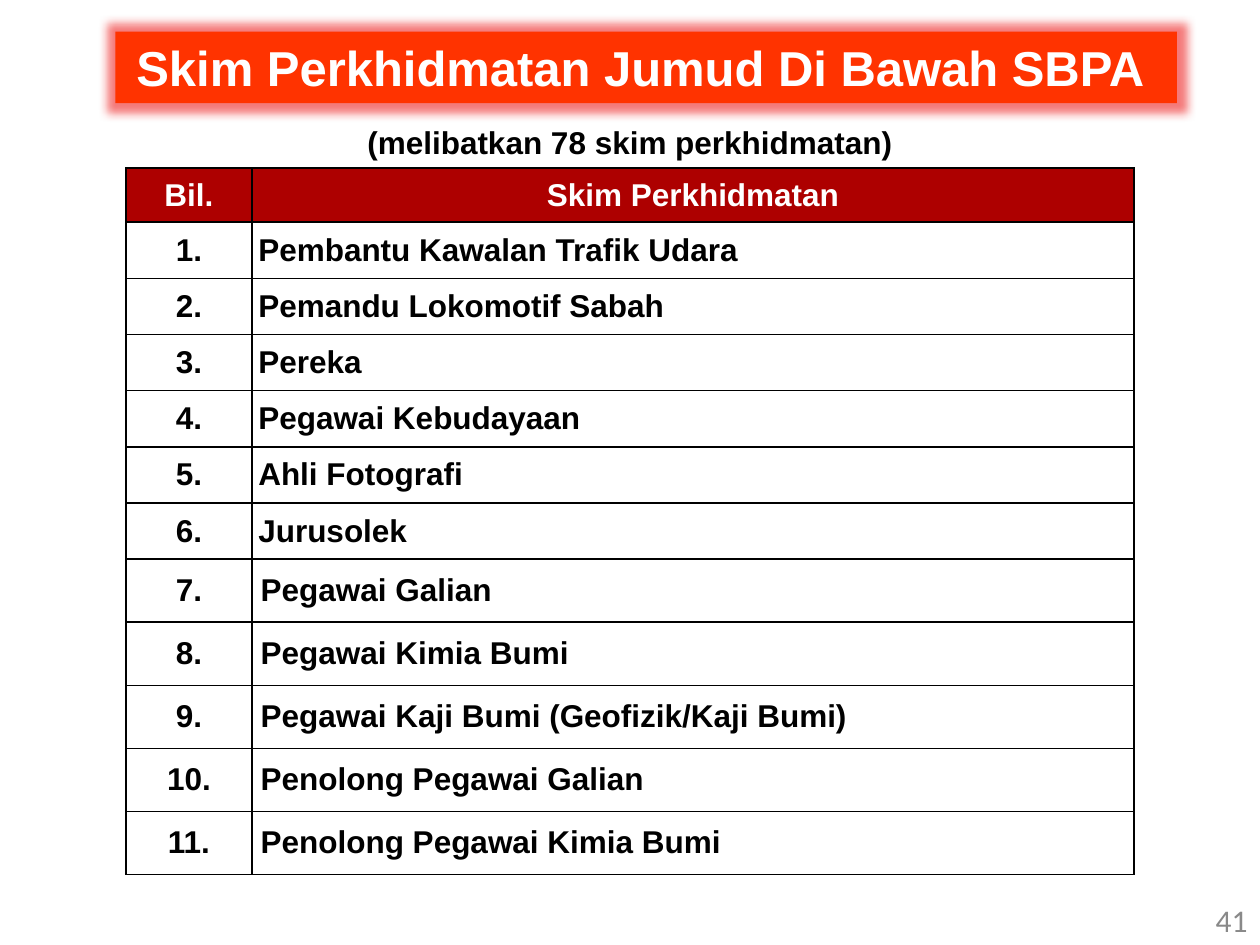
from lxml import etree
from pptx import Presentation
from pptx.dml.color import RGBColor
from pptx.enum import text as t
from pptx.oxml import ns
from pptx.util import Pt

COLOURS = {
    "banner": "FF3300",
    "glow": "EE2222",
    "header": "AD0000",
    "white": "FFFFFF",
    "black": "000000",
    "grey": "898989",
}
SCHEMES = [
    "Pembantu Kawalan Trafik Udara",
    "Pemandu Lokomotif Sabah",
    "Pereka",
    "Pegawai Kebudayaan",
    "Ahli Fotografi",
    "Jurusolek",
    "Pegawai Galian",
    "Pegawai Kimia Bumi",
    "Pegawai Kaji Bumi (Geofizik/Kaji Bumi)",
    "Penolong Pegawai Galian",
    "Penolong Pegawai Kimia Bumi",
]
COMPACT_ROWS = 6
COLUMN_WIDTHS = (72, 504)
HEADER_HEIGHT, COMPACT_HEIGHT, TALL_HEIGHT = 31, 32.1, 36


def colour(name):
    return RGBColor.from_string(COLOURS[name])


def write_text(frame, words, size=18, font="Arial", fill="black", bold=True,
               align=t.PP_ALIGN.CENTER):
    paragraph = frame.paragraphs[0]
    paragraph.alignment = align
    run = paragraph.add_run()
    run.text = words
    run.font.size = Pt(size)
    run.font.name = font
    run.font.bold = bold
    run.font.color.rgb = colour(fill)


def add_colour(parent, name):
    return etree.SubElement(parent, ns.qn("a:srgbClr"), val=COLOURS[name])


def add_glow(shape, name, radius, opacity):
    effects = etree.SubElement(shape._element.spPr, ns.qn("a:effectLst"))
    glow = etree.SubElement(effects, ns.qn("a:glow"), rad=str(Pt(radius)))
    tint = add_colour(glow, name)
    etree.SubElement(tint, ns.qn("a:alpha"), val=str(opacity * 1000))


def add_borders(cell, name, width):
    properties = cell._tc.get_or_add_tcPr()
    for position, side in enumerate(("lnL", "lnR", "lnT", "lnB")):
        line = etree.Element(ns.qn("a:" + side), w=str(Pt(width)))
        add_colour(etree.SubElement(line, ns.qn("a:solidFill")), name)
        properties.insert(position, line)


def format_cell(cell, words, background="white", insets=(7.2, 3.6), **style):
    cell.vertical_anchor = t.MSO_ANCHOR.MIDDLE
    cell.margin_left = cell.margin_right = Pt(insets[0])
    cell.margin_top = cell.margin_bottom = Pt(insets[1])
    cell.fill.solid()
    cell.fill.fore_color.rgb = colour(background)
    add_borders(cell, "black", 1)
    write_text(cell.text_frame, words, **style)


def add_banner(slide, words):
    title = slide.shapes.title
    title.left, title.top, title.width, title.height = map(Pt, (66, 18, 606.5, 41))
    title.fill.solid()
    title.fill.fore_color.rgb = colour("banner")
    add_glow(title, "glow", 11, 60)
    frame = title.text_frame
    frame.auto_size = t.MSO_AUTO_SIZE.NONE
    frame.vertical_anchor = t.MSO_ANCHOR.MIDDLE
    write_text(frame, words, size=28, fill="white")


def add_label(slide, words, left, top, width, height, **style):
    label = slide.shapes.add_textbox(Pt(left), Pt(top), Pt(width), Pt(height))
    label.text_frame.word_wrap = True
    label.text_frame.vertical_anchor = t.MSO_ANCHOR.MIDDLE
    write_text(label.text_frame, words, **style)


def add_scheme_table(slide):
    tall_rows = len(SCHEMES) - COMPACT_ROWS
    heights = ([HEADER_HEIGHT] + [COMPACT_HEIGHT] * COMPACT_ROWS
               + [TALL_HEIGHT] * tall_rows)
    table = slide.shapes.add_table(
        len(heights), len(COLUMN_WIDTHS), Pt(72), Pt(96),
        Pt(sum(COLUMN_WIDTHS)), Pt(sum(heights))).table
    for column, width in zip(table.columns, COLUMN_WIDTHS):
        column.width = Pt(width)
    for row, height in zip(table.rows, heights):
        row.height = Pt(height)
    for index, heading in enumerate(("Bil.", "Skim Perkhidmatan")):
        format_cell(table.cell(0, index), heading, background="header", fill="white")
    for number, scheme in enumerate(SCHEMES, 1):
        insets = (3.6, 5) if number <= COMPACT_ROWS else (5, 7.2)
        format_cell(table.cell(number, 0), f"{number}.")
        format_cell(table.cell(number, 1), scheme, insets=insets,
                    align=t.PP_ALIGN.LEFT)


def main():
    presentation = Presentation()
    presentation.slide_width, presentation.slide_height = Pt(720), Pt(540)
    slide = presentation.slides.add_slide(presentation.slide_layouts[5])
    add_label(slide, "(melibatkan 78 skim perkhidmatan)", 0, 66.5, 720, 29)
    add_scheme_table(slide)
    add_banner(slide, "Skim Perkhidmatan Jumud Di Bawah SBPA ")
    add_label(slide, "41", 552, 511, 168, 29, font="Calibri", fill="grey",
              bold=False, align=t.PP_ALIGN.RIGHT)
    presentation.save("out.pptx")


if __name__ == "__main__":
    main()
